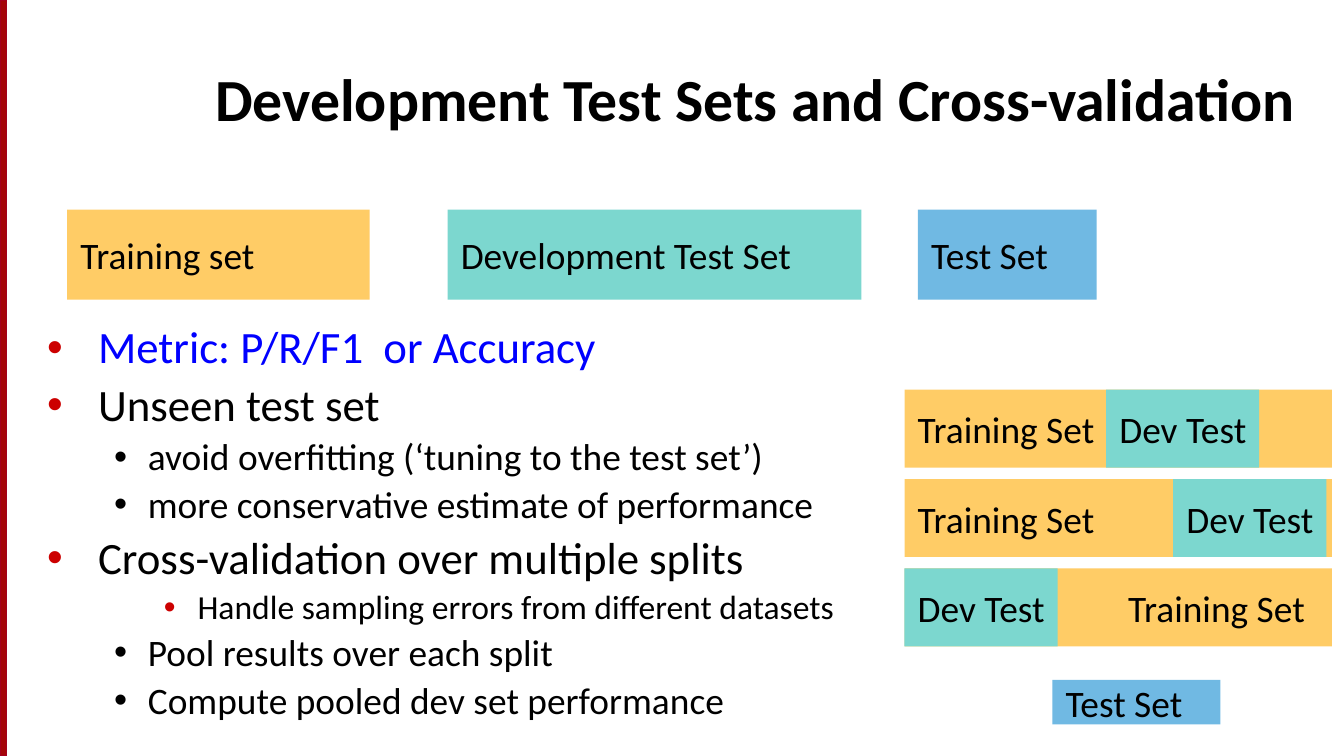
from pptx import Presentation
from pptx.dml.color import RGBColor
from pptx.enum.shapes import MSO_SHAPE
from pptx.enum.text import MSO_ANCHOR, MSO_AUTO_SIZE, PP_ALIGN
from pptx.oxml.ns import qn
from pptx.util import Inches, Pt
from lxml.etree import SubElement

BLACK = RGBColor(0x00, 0x00, 0x00)
BLUE = RGBColor(0x00, 0x00, 0xFF)
RED = RGBColor(0xCC, 0x00, 0x00)
BAR_FILL = RGBColor(0xA4, 0x05, 0x08)
BAR_LINE = RGBColor(0xA4, 0x00, 0x1D)
TRAINING = RGBColor(0xFF, 0xCC, 0x66)
DEVELOPMENT = RGBColor(0x7C, 0xD7, 0xCF)
TEST = RGBColor(0x70, 0xB9, 0xE3)
FONT = "Calibri"

# Widescreen page
PAGE_WIDTH = 10
PAGE_HEIGHT = PAGE_WIDTH * 9 / 16

# Content
TITLE = "Development Test Sets and Cross-validation"

# Bullet style: outline level, left indent, hanging indent, size, bullet colour
STYLES = {
    "main": (0, 0.38, 0.38, 24, RED),
    "sub": (1, 0.75, 0.25, 20, BLACK),
    "detail": (2, 1.12, 0.25, 18, RED),
}
BULLETS = [
    ("main", "Metric: P/R/F1  or Accuracy", BLUE),
    ("main", "Unseen test set", BLACK),
    ("sub", "avoid overfitting (‘tuning to the test set’)", BLACK),
    ("sub", "more conservative estimate of performance", BLACK),
    ("main", "Cross-validation over multiple splits", BLACK),
    ("detail", "Handle sampling errors from different datasets", BLACK),
    ("sub", "Pool results over each split", BLACK),
    ("sub", "Compute pooled dev set performance", BLACK),
]

# Data sets: label, left, top, width, height, fill
DATA_SETS = [
    ("Training set", 0.5, 1.56, 2.25, 0.67, TRAINING),
    ("Development Test Set", 3.33, 1.56, 3.08, 0.67, DEVELOPMENT),
    ("Test Set", 6.83, 1.56, 1.33, 0.67, TEST),
    ("Test Set", 7.83, 5.06, 1.25, 0.33, TEST),
]

# Splits: offset of the dev part in the row, alignment of the training label
SPLITS = [(1.5, PP_ALIGN.LEFT), (2.0, PP_ALIGN.LEFT), (0, PP_ALIGN.RIGHT)]
SPLIT_LEFT, SPLIT_TOP, SPLIT_BOTTOM = 6.73, 2.9, 4.81
SPLIT_WIDTH, DEV_WIDTH, SPLIT_HEIGHT = 3.18, 1.14, 0.58
SPLIT_PITCH = (SPLIT_BOTTOM - SPLIT_HEIGHT - SPLIT_TOP) / (len(SPLITS) - 1)


def write(para, text, size=20, color=BLACK, bold=False, align=PP_ALIGN.LEFT):
    para.alignment = align
    span = para.add_run()
    span.text = text
    span.font.name = FONT
    span.font.size = Pt(size)
    span.font.bold = bold
    span.font.color.rgb = color


def place(shape, left, top, width, height):
    shape.left, shape.top = Inches(left), Inches(top)
    shape.width, shape.height = Inches(width), Inches(height)


def add_box(page, left, top, width, height, fill):
    box = page.shapes.add_shape(MSO_SHAPE.RECTANGLE, Inches(left), Inches(top),
                                Inches(width), Inches(height))
    box.shadow.inherit = False
    box.fill.solid()
    box.fill.fore_color.rgb = fill
    box.line.fill.background()
    return box


def add_label_box(page, text, left, top, width, height, fill, align=PP_ALIGN.LEFT):
    frame = add_box(page, left, top, width, height, fill).text_frame
    frame.vertical_anchor = MSO_ANCHOR.MIDDLE
    frame.word_wrap = align == PP_ALIGN.RIGHT
    if align == PP_ALIGN.RIGHT:
        frame.margin_right = Inches(0.2)
    write(frame.paragraphs[0], text, align=align)


def set_bullet(para, left, hanging, color):
    properties = para._p.get_or_add_pPr()
    properties.set("marL", str(Inches(left)))
    properties.set("indent", str(-Inches(hanging)))
    bullet_color = SubElement(properties, qn("a:buClr"))
    SubElement(bullet_color, qn("a:srgbClr"), val=str(color))
    SubElement(properties, qn("a:buFont"), typeface="Arial")
    SubElement(properties, qn("a:buChar"), char="•")


deck = Presentation()
deck.slide_width, deck.slide_height = Inches(PAGE_WIDTH), Inches(PAGE_HEIGHT)
page = deck.slides.add_slide(deck.slide_layouts[1])

# Side bar
bar = add_box(page, 0, 0, 0.05, PAGE_HEIGHT, BAR_FILL)
bar.line.color.rgb = BAR_LINE
bar.line.width = Pt(0.75)

# Title
title = page.shapes.title
place(title, 1.5, 0.23, 8.5, 0.81)
title.text_frame.vertical_anchor = MSO_ANCHOR.BOTTOM
title.text_frame.auto_size = MSO_AUTO_SIZE.NONE
write(title.text_frame.paragraphs[0], TITLE, size=32, bold=True)

# Bullet list
body = page.placeholders[1]
place(body, 0.25, 2.37, 7.92, 3.25)
frame = body.text_frame
frame.auto_size = MSO_AUTO_SIZE.NONE
for index, (style, text, color) in enumerate(BULLETS):
    level, left, hanging, size, bullet_color = STYLES[style]
    para = frame.add_paragraph() if index else frame.paragraphs[0]
    para.level = level
    para.line_spacing = 0.9
    para.space_before = Pt(0.2 * size)
    set_bullet(para, left, hanging, bullet_color)
    write(para, text, size=size, color=color)

# Data sets
for data_set in DATA_SETS:
    add_label_box(page, *data_set)

# Cross-validation splits
for row, (dev_offset, align) in enumerate(SPLITS):
    top = SPLIT_TOP + row * SPLIT_PITCH
    add_label_box(page, "Training Set", SPLIT_LEFT, top, SPLIT_WIDTH, SPLIT_HEIGHT,
                  TRAINING, align=align)
    add_label_box(page, "Dev Test", SPLIT_LEFT + dev_offset, top, DEV_WIDTH,
                  SPLIT_HEIGHT, DEVELOPMENT)

deck.save("out.pptx")
